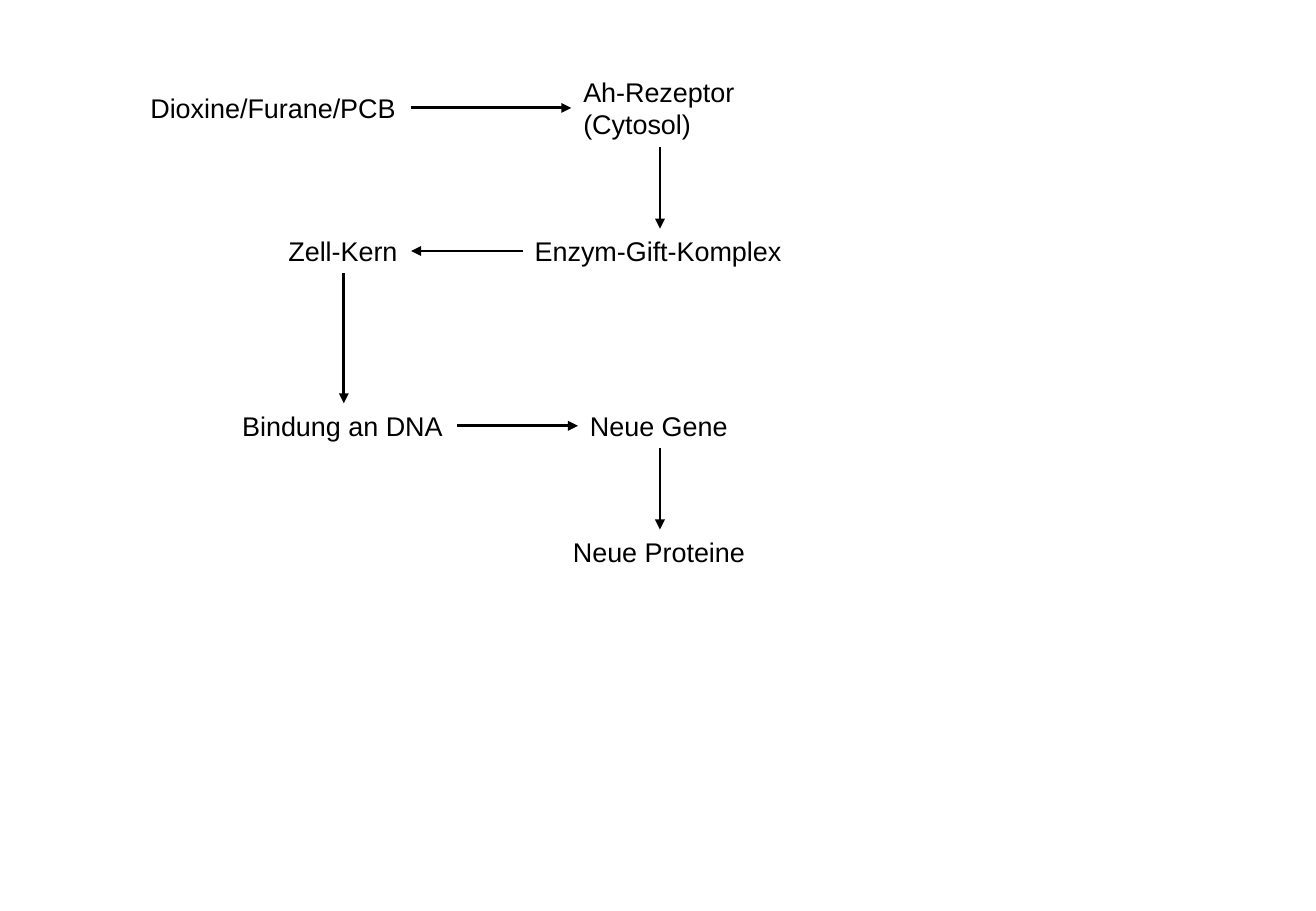
from dataclasses import dataclass

from lxml.etree import SubElement
from pptx import Presentation
from pptx.dml.color import RGBColor
from pptx.enum.shapes import MSO_CONNECTOR
from pptx.enum.text import MSO_ANCHOR, MSO_AUTO_SIZE, PP_ALIGN
from pptx.oxml.ns import qn
from pptx.util import Pt

TOP, LEFT, BOTTOM, RIGHT = range(4)


@dataclass(frozen=True)
class Theme:
    font: str = "Arial"
    size: float = 16
    ink: RGBColor = RGBColor(0, 0, 0)
    paper: RGBColor = RGBColor(255, 255, 255)
    stroke: float = 1.75


def apply(target, values):
    for name, value in values.items():
        setattr(target, name, value)


class Chart:
    def __init__(self, slide, theme):
        self.slide = slide
        self.theme = theme
        fill = slide.background.fill
        fill.solid()
        fill.fore_color.rgb = theme.paper

    def label(self, text, mid_x, mid_y, width):
        """Add a text box around its centre, one paragraph per line."""
        lines = text.split("\n")
        height = 26.6 + 19.4 * (len(lines) - 1)
        box = self.slide.shapes.add_textbox(
            Pt(mid_x - width / 2), Pt(mid_y - height / 2), Pt(width), Pt(height))
        frame = box.text_frame
        apply(frame, {"word_wrap": False,
                      "auto_size": MSO_AUTO_SIZE.SHAPE_TO_FIT_TEXT,
                      "vertical_anchor": MSO_ANCHOR.TOP})
        frame.text = text
        for para in frame.paragraphs:
            para.alignment = PP_ALIGN.LEFT
            for run in para.runs:
                apply(run.font, {"name": self.theme.font, "size": Pt(self.theme.size)})
                run.font.color.rgb = self.theme.ink
        return box

    def arrow(self, start, start_side, end, end_side):
        line = self.slide.shapes.add_connector(MSO_CONNECTOR.STRAIGHT, 0, 0, 0, 0)
        line.begin_connect(start, start_side)
        line.end_connect(end, end_side)
        line.line.width = Pt(self.theme.stroke)
        line.line.color.rgb = self.theme.ink
        SubElement(line.line._get_or_add_ln(), qn("a:tailEnd"), type="triangle")
        SubElement(line._element.spPr, qn("a:effectLst"))


def main():
    deck = Presentation()
    apply(deck, {"slide_width": Pt(780), "slide_height": Pt(540)})
    chart = Chart(deck.slides.add_slide(deck.slide_layouts[6]), Theme())

    left, right = 203.8, 391.2
    rows = 64, 148.8, 252.4, 327.2
    labels = {
        "toxin": ("Dioxine/Furane/PCB", 162.7, rows[0], 161.3),
        "receptor": ("Ah-Rezeptor\n(Cytosol)", right, rows[0], 105.1),
        "complex": ("Enzym-Gift-Komplex", right, rows[1], 162.7),
        "nucleus": ("Zell-Kern", left, rows[1], 79.9),
        "binding": ("Bindung an DNA", left, rows[2], 134.6),
        "genes": ("Neue Gene", right, rows[2], 97.2),
        "proteins": ("Neue Proteine", right, rows[3], 117.4),
    }
    boxes = {name: chart.label(*values) for name, values in labels.items()}

    steps = [
        ("toxin", RIGHT, "receptor", LEFT),
        ("receptor", BOTTOM, "complex", TOP),
        ("complex", LEFT, "nucleus", RIGHT),
        ("nucleus", BOTTOM, "binding", TOP),
        ("binding", RIGHT, "genes", LEFT),
        ("genes", BOTTOM, "proteins", TOP),
    ]
    for start, start_side, end, end_side in steps:
        chart.arrow(boxes[start], start_side, boxes[end], end_side)

    deck.save("out.pptx")


if __name__ == "__main__":
    main()
